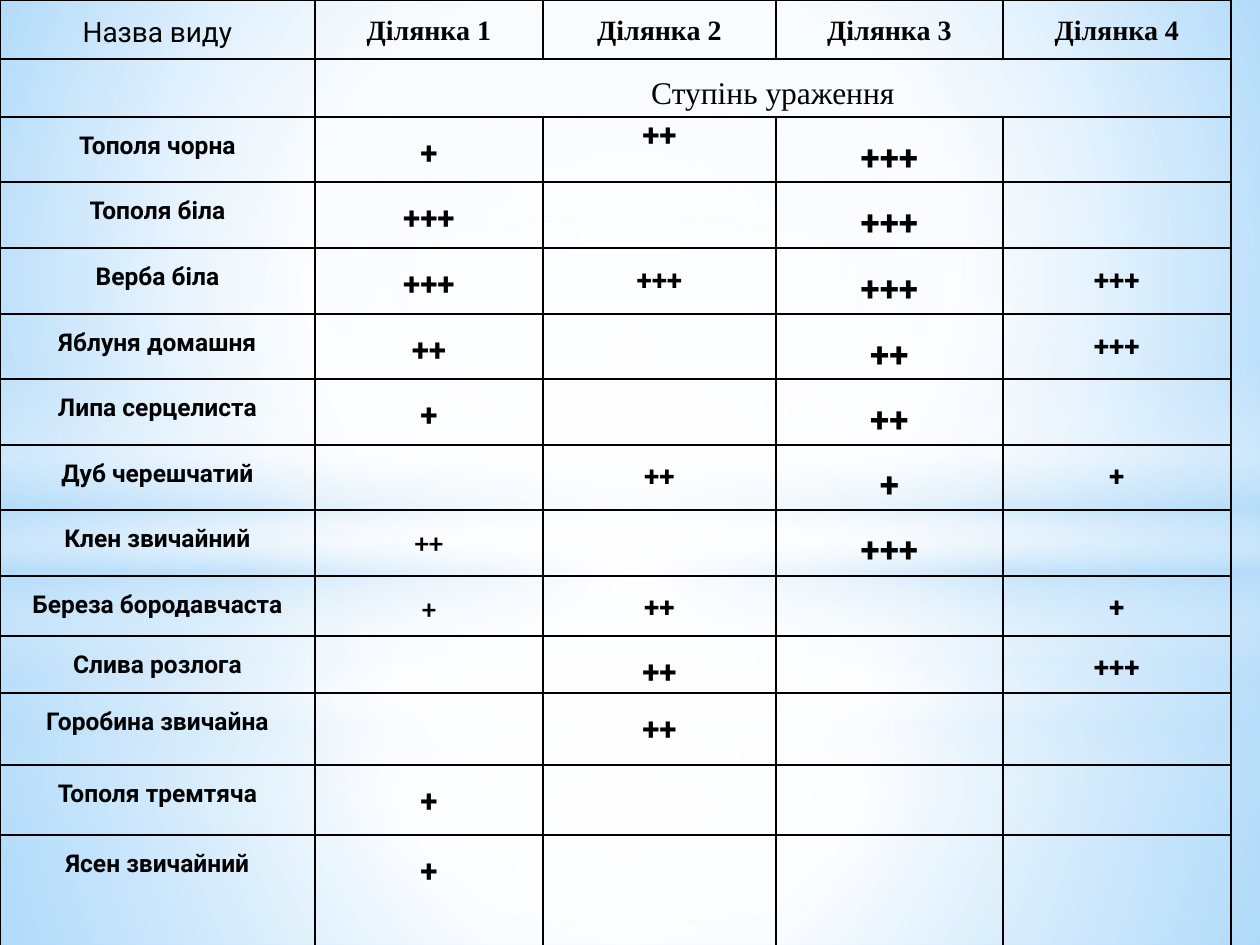
from lxml import etree
from pptx import Presentation
from pptx.dml.color import RGBColor
from pptx.enum.shapes import MSO_SHAPE as Shape
from pptx.enum.text import PP_ALIGN as Align
from pptx.oxml import parse_xml
from pptx.oxml.ns import nsdecls, qn
from pptx.util import Pt

SCALE = 914400 // 126
BLACK = RGBColor(0, 0, 0)
WHITE = RGBColor(0xFF, 0xFF, 0xFF)
PALE = RGBColor(0xB4, 0xDC, 0xFA)
SKY = RGBColor(0x9E, 0xD5, 0xFF)
BLUE = RGBColor(0x5B, 0xB9, 0xFF)

BACKDROP = [(0, SKY, 100), (60, WHITE, 100), (100, BLUE, 100)]
BAND = [(0, WHITE, 0), (29, WHITE, 30), (45, PALE, 40), (55, WHITE, 26),
        (65, PALE, 60), (100, WHITE, 0)]
CENTRE = (50, 50, 50, 50)


def glow(inner, middle, middle_at, outer):
    return [(0, WHITE, inner), (middle_at, WHITE, middle), (100, PALE, outer)]


LAYERS = [
    (Shape.RECTANGLE, 703, 242, glow(91, 76, 37, 79), CENTRE),
    (Shape.RECTANGLE, 0, 703, glow(89, 62, 48, 79), CENTRE),
    (Shape.RECTANGLE, 519, 315, BAND, None),
    (Shape.OVAL, 220, 703, [(0, WHITE, 100), (56, WHITE, 0)], CENTRE),
    (Shape.RECTANGLE, 533, 412, glow(92, 77, 37, 80), CENTRE),
    (Shape.RECTANGLE, 0, 533, glow(90, 63, 48, 80), CENTRE),
    (Shape.RECTANGLE, 365, 315, BAND, None),
    (Shape.OVAL, 220, 703, [(0, WHITE, 100), (54, WHITE, 0)], CENTRE),
]

COLUMNS = [315, 228, 233, 227, 228]
ROWS = [59, 58, 65, 66, 66, 65, 66, 65, 66, 60, 57, 72, 70, 200]
CONTENT = [
    ("Назва виду", "Ділянка 1", "Ділянка 2", "Ділянка 3", "Ділянка 4"),
    ("", "Ступінь ураження", "", "", ""),
    ("Тополя чорна", "+", "++", "+++", ""),
    ("Тополя біла", "+++", "", "+++", ""),
    ("Верба біла", "+++", "+++", "+++", "+++"),
    ("Яблуня домашня", "++", "", "++", "+++"),
    ("Липа серцелиста", "+", "", "++", ""),
    ("Дуб черешчатий", "", "++", "+", "+"),
    ("Клен звичайний", "++", "", "+++", ""),
    ("Береза бородавчаста", "+", "++", "", "+"),
    ("Слива розлога", "", "++", "", "+++"),
    ("Горобина звичайна", "", "++", "", ""),
    ("Тополя тремтяча", "+", "", "", ""),
    ("Ясен звичайний", "+", "", "", ""),
]

HEADER_FORMAT = {"name": "Times New Roman", "size": Pt(16), "bold": True}
COLUMN_FORMATS = [{"name": "Roboto", "size": Pt(size), "bold": True}
                  for size in (14, 18, 16, 20, 16)]
SPECIAL_FORMATS = {
    (0, 0): {"name": "Roboto", "bold": False},
    (1, 1): {"size": Pt(18), "bold": False},
    (2, 2): {"size": Pt(18)},
    (8, 1): {"name": "Calibri", "size": Pt(16)},
    (9, 1): {"name": "Calibri", "size": Pt(16)},
    (10, 2): {"size": Pt(18)},
    (11, 2): {"size": Pt(18)},
}
SINGLE_SPACED = (2, 2)


def px(value):
    return value * SCALE


def set_gradient(fill, properties, stops, focus):
    fill.gradient()
    gradient = properties.find(qn("a:gradFill"))
    stop_xml = "".join(
        f'<a:gs pos="{position * 1000}"><a:srgbClr val="{color}">'
        f'<a:alpha val="{opacity * 1000}"/></a:srgbClr></a:gs>'
        for position, color, opacity in stops)
    if focus:
        sides = " ".join(f'{side}="{value * 1000}"' for side, value in zip("ltrb", focus))
        direction = f'<a:path path="circle"><a:fillToRect {sides}/></a:path>'
    else:
        direction = '<a:lin ang="5400000" scaled="0"/>'
    properties.replace(gradient, parse_xml(
        f'<a:gradFill {nsdecls("a")} rotWithShape="1">'
        f'<a:gsLst>{stop_xml}</a:gsLst>{direction}</a:gradFill>'))


def add_borders(cell):
    properties = cell._tc.get_or_add_tcPr()
    for index, side in enumerate(("lnL", "lnR", "lnT", "lnB")):
        line = etree.Element(qn(f"a:{side}"), w=str(Pt(1)))
        fill = etree.SubElement(line, qn("a:solidFill"))
        etree.SubElement(fill, qn("a:srgbClr"), val=str(BLACK))
        properties.insert(index, line)


def fill_cell(cell, row, column, text):
    margins = {"margin_left": px(9), "margin_right": px(9),
               "margin_top": 0, "margin_bottom": 0}
    for name, value in margins.items():
        setattr(cell, name, value)
    cell.fill.background()
    add_borders(cell)
    if not text:
        return
    paragraph = cell.text_frame.paragraphs[0]
    paragraph.alignment = Align.CENTER
    paragraph.line_spacing = 1.0 if (row, column) == SINGLE_SPACED else 1.5
    run = paragraph.add_run()
    run.text = text
    run.font.color.rgb = BLACK
    base = HEADER_FORMAT if row < 2 else COLUMN_FORMATS[column]
    for name, value in (base | SPECIAL_FORMATS.get((row, column), {})).items():
        setattr(run.font, name, value)


def add_layers(slide):
    background = slide.background.fill
    set_gradient(background, slide._element.cSld.bg.bgPr, BACKDROP, (20, 10, 20, 60))
    for kind, top, height, stops, focus in LAYERS:
        shape = slide.shapes.add_shape(kind, 0, px(top), px(1260), px(height))
        shape.shadow.inherit = False
        shape.line.fill.background()
        set_gradient(shape.fill, shape._element.spPr, stops, focus)


def add_damage_table(slide):
    table = slide.shapes.add_table(len(ROWS), len(COLUMNS), 0, 0,
                                   px(sum(COLUMNS)), px(sum(ROWS))).table
    table.first_row = table.horz_banding = False
    for column, width in zip(table.columns, COLUMNS):
        column.width = px(width)
    for row, height in zip(table.rows, ROWS):
        row.height = px(height)
    table.cell(1, 1).merge(table.cell(1, 4))
    for row, texts in enumerate(CONTENT):
        for column, text in enumerate(texts):
            fill_cell(table.cell(row, column), row, column, text)


def main():
    presentation = Presentation()
    presentation.slide_width, presentation.slide_height = px(1260), px(945)
    slide = presentation.slides.add_slide(presentation.slide_layouts[6])
    add_layers(slide)
    add_damage_table(slide)
    presentation.save("out.pptx")


if __name__ == "__main__":
    main()
